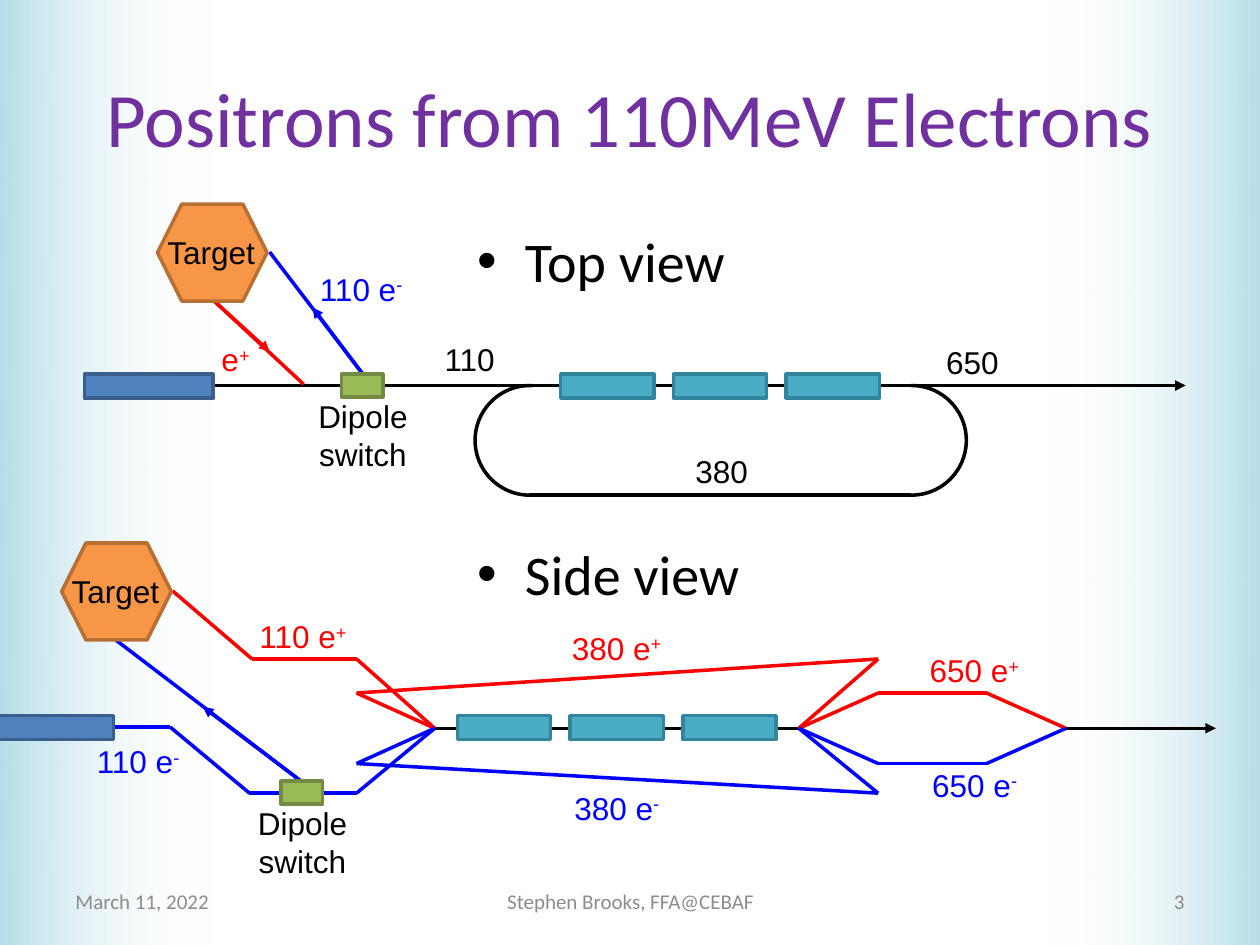
from dataclasses import dataclass
from itertools import pairwise

from lxml import etree
from pptx import Presentation, util as u
from pptx.dml.color import RGBColor
from pptx.enum import shapes, text
from pptx.oxml import ns

COLUMNS, ROWS = 100, 75
BLACK = RGBColor(0x00, 0x00, 0x00)
WHITE = RGBColor(0xFF, 0xFF, 0xFF)
RED = RGBColor(0xFF, 0x00, 0x00)
BLUE = RGBColor(0x00, 0x00, 0xFF)
PURPLE = RGBColor(0x70, 0x30, 0xA0)
GREY = RGBColor(0x8C, 0x8C, 0x8C)
PALE_TEAL = RGBColor(0xB7, 0xDE, 0xE8)
RECTANGLE = shapes.MSO_SHAPE.RECTANGLE
LEFT, CENTER, RIGHT = text.PP_ALIGN.LEFT, text.PP_ALIGN.CENTER, text.PP_ALIGN.RIGHT

Point = tuple[float, float]


@dataclass(frozen=True)
class Kind:
    preset: shapes.MSO_SHAPE
    width: float
    height: float
    fill: RGBColor
    outline: RGBColor


@dataclass(frozen=True)
class Track:
    points: list[Point]
    color: RGBColor = BLACK
    arrow: bool = False


@dataclass(frozen=True)
class Beam:
    color: RGBColor
    near: float
    far: float
    entry: list[Point]


@dataclass(frozen=True)
class Label:
    left: float
    top: float
    width: float
    words: str
    charge: str = ""
    color: RGBColor = BLACK
    height: float = 4
    size: int = 18
    font: str = "Arial"
    align: text.PP_ALIGN = LEFT
    anchor: text.MSO_ANCHOR = text.MSO_ANCHOR.TOP
    wrap: bool = False


INJECTOR = Kind(RECTANGLE, 10.2, 1.9, RGBColor(0x4F, 0x81, 0xBD), RGBColor(0x3A, 0x5F, 0x8C))
CAVITY = Kind(RECTANGLE, 7.4, 1.9, RGBColor(0x4B, 0xAC, 0xC6), RGBColor(0x31, 0x85, 0x9C))
DIPOLE = Kind(RECTANGLE, 3.3, 1.8, RGBColor(0x9B, 0xBB, 0x59), RGBColor(0x73, 0x8A, 0x42))
TARGET = Kind(shapes.MSO_SHAPE.HEXAGON, 8.7, 7.7, RGBColor(0xF7, 0x96, 0x46), RGBColor(0xB7, 0x6F, 0x34))

CAVITY_PITCH = 8.95
TOP_AXIS, SIDE_AXIS = 30.6, 57.8
LOOP_SIZE = 8.7
LOOP_BOTTOM = TOP_AXIS + LOOP_SIZE
MERGE, CAVITY_EXIT, END = (34.5, SIDE_AXIS), (63.4, SIDE_AXIS), (84.6, SIDE_AXIS)

BEAMS = [
    Beam(RED, 55, 52.3, [(13.7, 46.9), (20, 52.3)]),
    Beam(BLUE, 60.6, 62.95, [(9.1, 57.7), (13.5, 57.7), (19.8, 62.95)]),
]

TRACKS = [
    Track([(16.9, TOP_AXIS), (94.1, TOP_AXIS)], arrow=True),
    Track([(42, LOOP_BOTTOM), (72.3, LOOP_BOTTOM)]),
    Track([END, (96.5, SIDE_AXIS)], arrow=True),
    Track([MERGE, CAVITY_EXIT]),
    Track([(23.9, 62), (16.1, 56.1)], BLUE, True),
    Track([(23.9, 62), (9.2, 50.8)], BLUE),
    Track([(28.8, 29.7), (24.8, 24.4)], BLUE, True),
    Track([(28.8, 29.7), (21.4, 20)], BLUE),
    Track([(16.9, 23.8), (24.1, 30.5)], RED),
    Track([(16.9, 23.8), (21.4, 27.9)], RED, True),
]
for beam in BEAMS:
    TRACKS += [
        Track(beam.entry + [(28.3, beam.far), MERGE], beam.color),
        Track([MERGE, (28.3, beam.near), (69.7, beam.far), CAVITY_EXIT], beam.color),
        Track([CAVITY_EXIT, (69.7, beam.near), (78.3, beam.near), END], beam.color),
    ]

PARTS = [
    (INJECTOR, 6.7, 29.7), (INJECTOR, -1.2, 56.8),
    (DIPOLE, 27.1, 29.7), (DIPOLE, 22.3, 62),
    (TARGET, 12.5, 16.2), (TARGET, 4.9, 43.1),
]
for first_left, cavity_top in [(44.5, 29.7), (36.3, 56.8)]:
    PARTS += [(CAVITY, first_left + i * CAVITY_PITCH, cavity_top) for i in range(3)]

LABELS = [
    Label(34.3, 26.5, 6, "110"),
    Label(74.1, 26.7, 6.2, "650"),
    Label(54.2, 35.4, 6.2, "380"),
    Label(44.4, 49.4, 9.3, "380 e", "+", RED),
    Label(44.6, 62.1, 8.9, "380 e", "-", BLUE),
    Label(19.6, 48.5, 9.1, "110 e", "+", RED),
    Label(6.7, 58.4, 8.7, "110 e", "-", BLUE),
    Label(72.8, 51.2, 9.3, "650 e", "+", RED),
    Label(73, 60.3, 8.9, "650 e", "-", BLUE),
    Label(24.4, 20.9, 8.7, "110 e", "-", BLUE),
    Label(16.6, 26.5, 4.4, "e", "+", RED),
]
LABELS += [Label(left, top, 9, "Target") for left, top in [(12.3, 18), (4.7, 44.9)]]
LABELS += [
    Label(left, top, 10.2, "Dipole switch", height=7.1, align=CENTER, wrap=True)
    for left, top in [(18.9, 63.3), (23.7, 31)]
]
LABELS += [
    Label(left, 69.5, width, words, color=GREY, size=12, font="Calibri",
          align=align, anchor=text.MSO_ANCHOR.MIDDLE, wrap=True)
    for left, width, words, align in [
        (5, 23.3, "March 11, 2022", LEFT),
        (34.2, 31.7, "Stephen Brooks, FFA@CEBAF", CENTER),
        (71.7, 23.3, "3", RIGHT),
    ]
]

presentation = Presentation()
presentation.slide_width, presentation.slide_height = u.Inches(10), u.Inches(7.5)
slide = presentation.slides.add_slide(presentation.slide_layouts[1])


def cells(*lengths: float) -> list[int]:
    return [round(length * presentation.slide_width / COLUMNS) for length in lengths]


def draw_edge(left: float, rotation: int, depth: int) -> None:
    shape = slide.shapes.add_shape(RECTANGLE, *cells(left, 0, 16.9, ROWS))
    shape.shadow.inherit = False
    shape.rotation = rotation
    shape.line.fill.background()
    shape.fill.gradient()
    shape.fill.gradient_angle = 0
    for stop, color in zip(shape.fill.gradient_stops, (PALE_TEAL, WHITE)):
        stop.color.rgb = color
    clear = shape._element.spPr.findall(".//" + ns.qn("a:srgbClr"))[-1]
    etree.SubElement(clear, ns.qn("a:alpha"), val="0")
    slide.shapes._spTree.insert(2 + depth, shape._element)


def draw_track(track: Track) -> None:
    for start, end in pairwise(track.points):
        connector = slide.shapes.add_connector(
            shapes.MSO_CONNECTOR.STRAIGHT, *cells(*start, *end))
        connector.line.color.rgb = track.color
        connector.line.width = u.Pt(2)
        if track.arrow:
            etree.SubElement(connector.line._get_or_add_ln(), ns.qn("a:tailEnd"), type="triangle")
        etree.SubElement(connector._element.spPr, ns.qn("a:effectLst"))


def draw_arc(left: float, rotation: int) -> None:
    arc = slide.shapes.add_shape(
        shapes.MSO_SHAPE.ARC, *cells(left, TOP_AXIS, LOOP_SIZE, LOOP_SIZE))
    arc.adjustments[0], arc.adjustments[1] = 162, 55.62
    arc.rotation = rotation
    arc.shadow.inherit = False
    arc.fill.background()
    arc.line.color.rgb = BLACK
    arc.line.width = u.Pt(2)


def draw_part(kind: Kind, left: float, top: float) -> None:
    shape = slide.shapes.add_shape(kind.preset, *cells(left, top, kind.width, kind.height))
    shape.shadow.inherit = False
    shape.fill.solid()
    shape.fill.fore_color.rgb = kind.fill
    shape.line.color.rgb = kind.outline
    shape.line.width = u.Pt(2)


def draw_label(label: Label) -> None:
    box = slide.shapes.add_textbox(*cells(label.left, label.top, label.width, label.height))
    frame = box.text_frame
    frame.word_wrap = label.wrap
    frame.vertical_anchor = label.anchor
    paragraph = frame.paragraphs[0]
    paragraph.alignment = label.align
    paragraph.add_run().text = label.words
    if label.charge:
        charge = paragraph.add_run()
        charge.text = label.charge
        charge.font._element.set("baseline", "30000")
    for run in paragraph.runs:
        run.font.name, run.font.size = label.font, u.Pt(label.size)
        run.font.color.rgb = label.color


title, body = slide.placeholders
title.left, title.top, title.width, title.height = cells(5, 3, 90, 12.5)
title.text_frame.text = "Positrons from 110MeV Electrons"
title.text_frame.paragraphs[0].font.color.rgb = PURPLE
body.left, body.top, body.width, body.height = cells(36.9, 17.5, 58.1, 49.5)
body.text_frame.text = "Top view\nSide view"
body.text_frame.paragraphs[1].space_before = u.Pt(140)

for depth, (left, rotation) in enumerate([(83.1, 180), (0, 0)]):
    draw_edge(left, rotation, depth)
for track in TRACKS:
    draw_track(track)
for left, rotation in [(68, 0), (37.7, 180)]:
    draw_arc(left, rotation)
for part in PARTS:
    draw_part(*part)
for label in LABELS:
    draw_label(label)

presentation.save("out.pptx")
